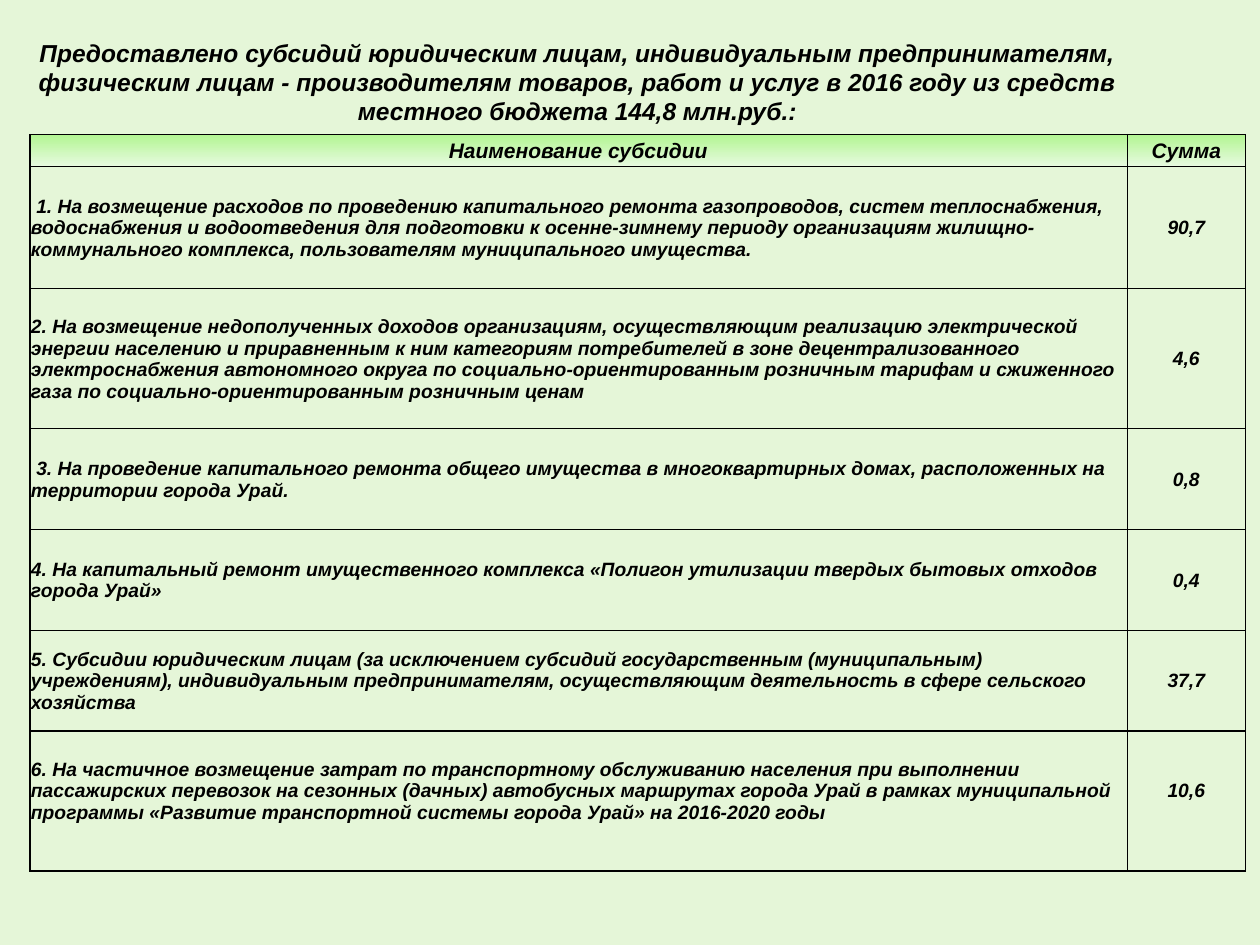
from lxml.etree import SubElement
from pptx import Presentation
from pptx.dml.color import RGBColor
from pptx.enum.text import MSO_ANCHOR, PP_ALIGN
from pptx.oxml.ns import qn
from pptx.util import Pt

COLORS = {"bg": "E5F6D8", "ink": "000000", "head_top": "B2F592", "head_bottom": "E7FADF"}

TITLE = (
    "Предоставлено субсидий юридическим лицам, индивидуальным предпринимателям, "
    "физическим лицам - производителям товаров, работ и услуг в 2016 году из средств "
    "местного бюджета 144,8 млн.руб.:"
)
ROWS = [
    ("Наименование субсидии", "Сумма", 18),
    (" 1. На возмещение расходов по проведению капитального ремонта газопроводов, "
     "систем теплоснабжения, водоснабжения и водоотведения для подготовки к "
     "осенне-зимнему периоду организациям жилищно-коммунального комплекса, "
     "пользователям муниципального имущества.", "90,7", 70),
    ("2. На возмещение недополученных доходов организациям, осуществляющим реализацию "
     "электрической энергии населению и приравненным к ним категориям потребителей в зоне "
     "децентрализованного электроснабжения автономного округа по социально-ориентированным "
     "розничным тарифам и сжиженного газа по социально-ориентированным розничным ценам",
     "4,6", 80),
    (" 3. На проведение капитального ремонта общего имущества в многоквартирных домах, "
     "расположенных на территории города Урай.", "0,8", 57.6),
    ("4. На капитальный ремонт имущественного комплекса «Полигон утилизации твердых бытовых "
     "отходов города Урай»", "0,4", 57.6),
    ("5. Субсидии юридическим лицам (за исключением субсидий государственным "
     "(муниципальным) учреждениям), индивидуальным предпринимателям, осуществляющим "
     "деятельность в сфере сельского хозяйства", "37,7", 57.6),
    ("6. На частичное возмещение затрат по транспортному обслуживанию населения при "
     "выполнении пассажирских перевозок на сезонных (дачных) автобусных маршрутах города "
     "Урай в рамках муниципальной программы «Развитие транспортной системы города Урай» "
     "на 2016-2020 годы", "10,6", 80),
]
HEAVY_LINES = {0, 5, 6, 7}


def rgb(name):
    return RGBColor.from_string(COLORS[name])


def write(tf, text, size=11, align=PP_ALIGN.CENTER):
    p = tf.paragraphs[0]
    p.alignment = align
    r = p.add_run()
    r.text = text
    f = r.font
    f.name, f.size, f.bold, f.italic = "Arial", Pt(size), True, True
    f.color.rgb = rgb("ink")


def set_borders(cell, **widths):
    tcPr = cell._tc.get_or_add_tcPr()
    for i, side in enumerate("LRTB"):
        ln = SubElement(tcPr, qn(f"a:ln{side}"), w=str(Pt(widths[side])))
        fill = SubElement(ln, qn("a:solidFill"))
        SubElement(fill, qn("a:srgbClr"), val=COLORS["ink"])
        tcPr.insert(i, ln)


def fill_header(cell):
    cell.fill.gradient()
    cell.fill.gradient_angle = 270
    for stop, name in zip(cell.fill.gradient_stops, ("head_top", "head_bottom")):
        stop.color.rgb = rgb(name)


def add_title(s, x, y, w, h):
    tf = s.shapes.add_textbox(Pt(x), Pt(y), Pt(w), Pt(h)).text_frame
    tf.word_wrap = True
    tf.margin_top = Pt(21.5)
    write(tf, TITLE, size=14)


def add_subsidies(s, x, y, w, amount_w):
    heights = [row[2] for row in ROWS]
    table = s.shapes.add_table(
        len(ROWS), 2, Pt(x), Pt(y), Pt(w), Pt(sum(heights))).table
    table.first_row = table.horz_banding = False
    for col, width in zip(table.columns, (w - amount_w, amount_w)):
        col.width = Pt(width)
    last = len(ROWS) - 1
    for i, (*texts, height) in enumerate(ROWS):
        table.rows[i].height = Pt(height)
        for j, text in enumerate(texts):
            cell = table.cell(i, j)
            cell.vertical_anchor = MSO_ANCHOR.MIDDLE
            cell.margin_left = cell.margin_right = cell.margin_top = Pt(0.7)
            cell.margin_bottom = Pt(12 if i == last else 0)
            left = i > 0 and j == 0
            write(cell.text_frame, text, size=11 if i else 12,
                  align=PP_ALIGN.LEFT if left else PP_ALIGN.CENTER)
            if i:
                cell.fill.background()
            else:
                fill_header(cell)
            set_borders(cell, L=0.5 if j else 1, R=0.5,
                        T=1 if i in HEAVY_LINES else 0.5,
                        B=1 if i + 1 in HEAVY_LINES else 0.5)


def main():
    prs = Presentation()
    prs.slide_width, prs.slide_height = Pt(720), Pt(540)
    s = prs.slides.add_slide(prs.slide_layouts[6])
    s.background.fill.solid()
    s.background.fill.fore_color.rgb = rgb("bg")
    add_title(s, 0, 0, 660, 179)
    add_subsidies(s, 17, 77, 694.8, 67.8)
    prs.save("out.pptx")


if __name__ == "__main__":
    main()
